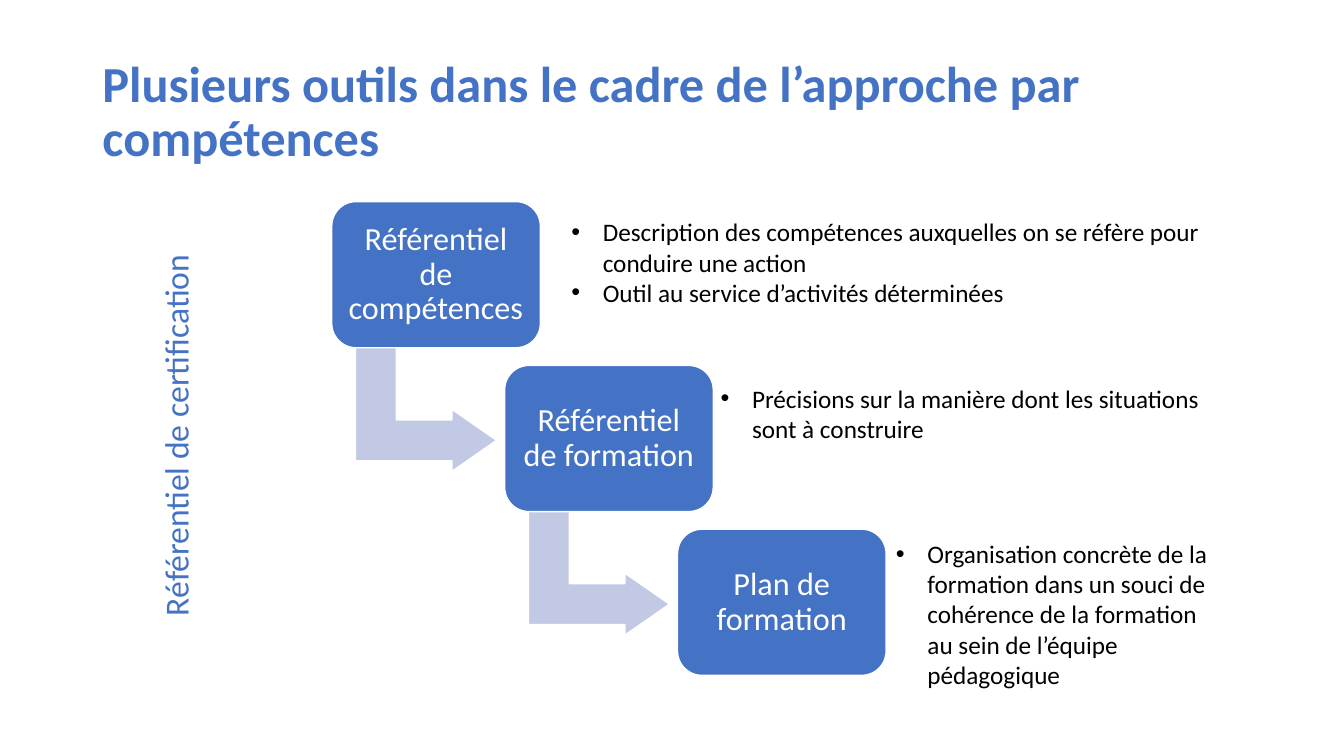
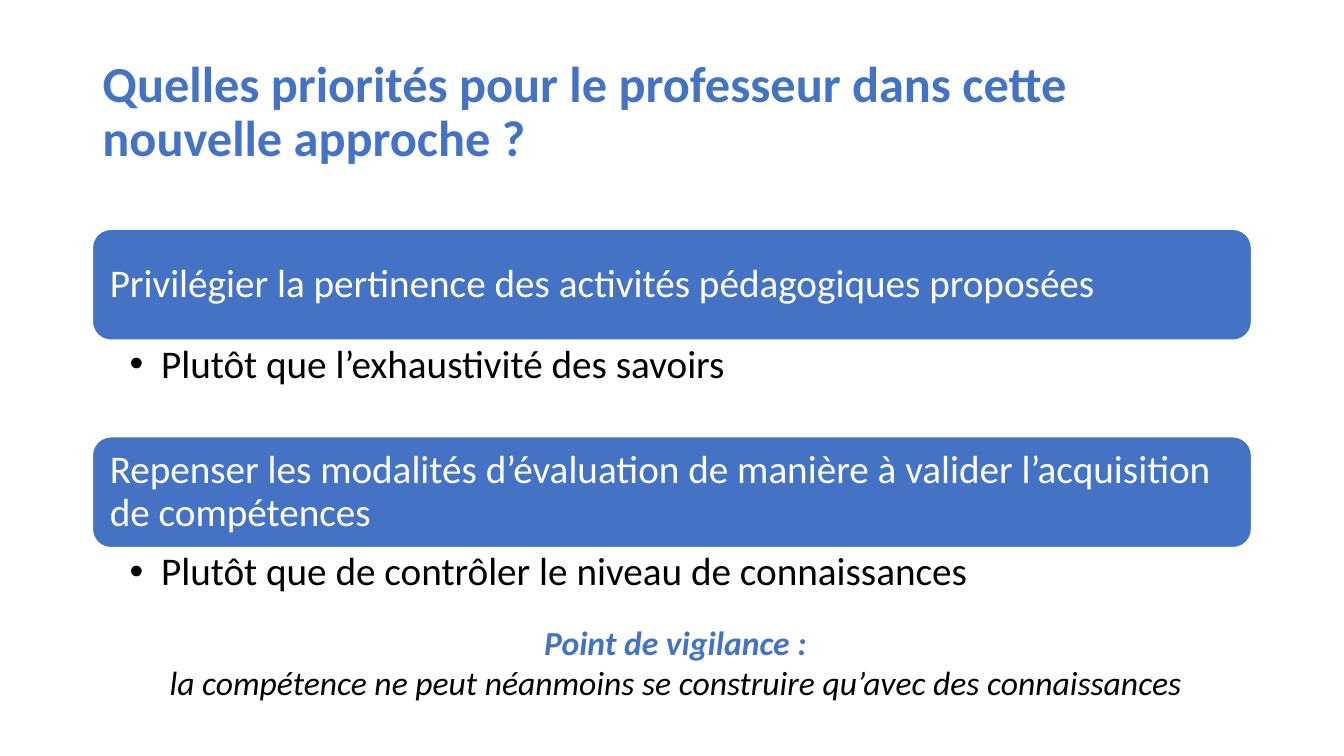
from lxml import etree
from pptx import Presentation
from pptx.dml.color import RGBColor
from pptx.enum import shapes, text
from pptx.oxml.ns import qn
from pptx.util import Pt

BLUE = RGBColor(0x44, 0x72, 0xC4)
PALE_BLUE = RGBColor(0xC1, 0xC9, 0xE4)
WHITE = RGBColor(0xFF, 0xFF, 0xFF)
BLACK = RGBColor(0, 0, 0)
FONT = "Calibri"
LEFT, WIDTH = 66, 828
LEFT_ALIGN, CENTER = text.PP_ALIGN.LEFT, text.PP_ALIGN.CENTER

TOOLS_TITLE = "Plusieurs outils dans le cadre de l’approche par compétences"
SIDE_LABEL = "Référentiel de certification"
# step name, place of its notes (left, top, width, height), notes
STEPS = [
    ("Référentiel de compétences", (401, 151.2, 464.4, 72.7),
     ["Description des compétences auxquelles on se réfère pour conduire une action",
      "Outil au service d’activités déterminées"]),
    ("Référentiel de formation", (507.6, 270, 386.6, 51),
     ["Précisions sur la manière dont les situations sont à construire"]),
    ("Plan de formation", (632.9, 380.9, 241.9, 116.6),
     ["Organisation concrète de la formation dans un souci de cohérence "
      "de la formation au sein de l’équipe pédagogique"]),
]
STEP_LEFT, STEP_TOP, STEP_DX, STEP_DY = 237, 144, 123.5, 117
STEP_SIZE, STEP_MARGIN = (149, 104.4), 5
ARROW_OFFSET, ARROW_SIZE = (23, 98), (88.6, 100.8)

PRIORITIES_TITLE = "Quelles priorités pour le professeur dans cette nouvelle approche ?"
PRIORITIES = [
    ("Privilégier la pertinence des activités pédagogiques proposées",
     "Plutôt que l’exhaustivité des savoirs"),
    ("Repenser les modalités d’évaluation de manière à valider l’acquisition de compétences",
     "Plutôt que de contrôler le niveau de connaissances"),
]
BAND_TOP, BAND_HEIGHT, BAND_STEP = 163.8, 79.2, 148.2
WARNING = ["Point de vigilance :",
           "la compétence ne peut néanmoins se construire qu’avec des connaissances"]


def write(shape, lines, size, color, align=LEFT_ALIGN, spacing=1.0, bold=False):
    frame = shape.text_frame
    frame.word_wrap = True
    frame.text = "\n".join(lines)
    for para in frame.paragraphs:
        para.alignment = align
        para.line_spacing = spacing
        for span in para.runs:
            font = span.font
            font.name, font.size, font.bold = FONT, Pt(size), bold
            font.color.rgb = color


def set_margins(shape, left, top, right, bottom):
    frame = shape.text_frame
    frame.margin_left, frame.margin_top = Pt(left), Pt(top)
    frame.margin_right, frame.margin_bottom = Pt(right), Pt(bottom)


def add_bullets(shape):
    for para in shape.text_frame.paragraphs:
        props = para._p.get_or_add_pPr()
        props.set("marL", str(Pt(22.5)))
        props.set("indent", str(Pt(-22.5)))
        etree.SubElement(props, qn("a:buFont")).set("typeface", "Arial")
        etree.SubElement(props, qn("a:buChar")).set("char", "•")


def add_page(deck, title):
    page = deck.slides.add_slide(deck.slide_layouts[5])
    box = page.shapes.title
    box.left, box.top, box.width, box.height = Pt(LEFT), Pt(28.8), Pt(WIDTH), Pt(104.4)
    write(box, [title], 36, BLUE, spacing=0.9, bold=True)
    box.text_frame.auto_size = text.MSO_AUTO_SIZE.NONE
    box.text_frame.vertical_anchor = text.MSO_ANCHOR.MIDDLE
    return page


def add_text(page, place, lines, size, color, **style):
    box = page.shapes.add_textbox(*map(Pt, place))
    write(box, lines, size, color, **style)
    return box


def add_figure(page, kind, place, fill):
    figure = page.shapes.add_shape(kind, *map(Pt, place))
    figure.shadow.inherit = False
    figure.fill.solid()
    figure.fill.fore_color.rgb = fill
    figure.line.color.rgb = WHITE
    figure.line.width = Pt(1)
    return figure


def add_rounded_box(page, place, label, size, margin, align):
    box = add_figure(page, shapes.MSO_SHAPE.ROUNDED_RECTANGLE, place, BLUE)
    write(box, [label], size, WHITE, align=align, spacing=0.9)
    set_margins(box, margin, margin, margin, margin)
    box.text_frame.vertical_anchor = text.MSO_ANCHOR.MIDDLE


def build_tools(deck):
    page = add_page(deck, TOOLS_TITLE)
    for index, (name, notes_place, notes) in enumerate(STEPS):
        left, top = STEP_LEFT + index * STEP_DX, STEP_TOP + index * STEP_DY
        if index < len(STEPS) - 1:
            place = (left + ARROW_OFFSET[0], top + ARROW_OFFSET[1], *ARROW_SIZE)
            arrow = add_figure(page, shapes.MSO_SHAPE.BENT_UP_ARROW, place, PALE_BLUE)
            arrow.rotation = 90
            for position, value in enumerate((0.33, 0.25, 0.36)):
                arrow.adjustments[position] = value
        add_rounded_box(page, (left, top, *STEP_SIZE), name, 23, STEP_MARGIN, CENTER)
        add_bullets(add_text(page, notes_place, notes, 18, BLACK))
    label = add_text(page, (-42.5, 293, 335.5, 36), [SIDE_LABEL], 24, BLUE, align=CENTER)
    label.rotation = 270


def build_priorities(deck):
    page = add_page(deck, PRIORITIES_TITLE)
    for index, (priority, contrast) in enumerate(PRIORITIES):
        top = BAND_TOP + index * BAND_STEP
        add_rounded_box(page, (LEFT, top, WIDTH, BAND_HEIGHT), priority, 28, 8.6, LEFT_ALIGN)
        box = add_text(page, (LEFT, top + BAND_HEIGHT, WIDTH, 34), [contrast], 28, BLACK,
                       spacing=0.9)
        set_margins(box, 26.6, 2.9, 15.8, 2.9)
        add_bullets(box)
    warning = add_text(page, (61.5, 440.6, 842, 65.5), WARNING, 24, BLACK, align=CENTER)
    heading, advice = (para.runs[0].font for para in warning.text_frame.paragraphs)
    heading.italic = advice.italic = heading.bold = True
    heading.color.rgb = BLUE


def main():
    deck = Presentation()
    deck.slide_width, deck.slide_height = Pt(960), Pt(540)
    build_tools(deck)
    build_priorities(deck)
    deck.save("out.pptx")


if __name__ == "__main__":
    main()
